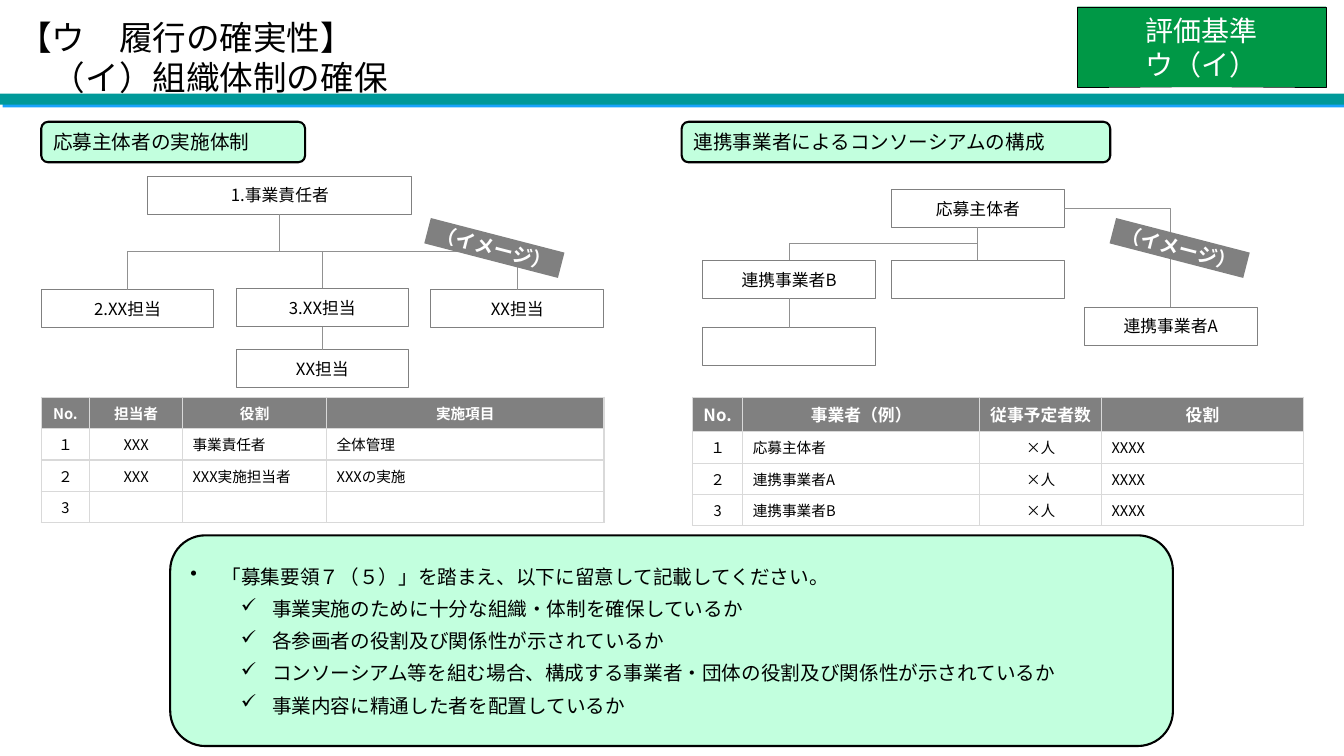
from lxml import etree
from pptx import Presentation, util as u
from pptx.dml import color
from pptx.enum import shapes, text
from pptx.oxml import ns

GRAY, LINE, MINT = "808080", "919191", "C2FFDE"
BLACK, WHITE, BORDER = "000000", "FFFFFF", "D9D9D9"
LEFT, CENTER = text.PP_ALIGN.LEFT, text.PP_ALIGN.CENTER
RECT = shapes.MSO_SHAPE.RECTANGLE
ROUNDED = shapes.MSO_SHAPE.ROUNDED_RECTANGLE
TOP, BOTTOM, RIGHT = 0, 2, 3


def rgb(value):
    return color.RGBColor.from_string(value)


def child(parent, tag, **attributes):
    return etree.SubElement(parent, ns.qn(tag), attributes)


class SlideBuilder:
    font = "Noto Sans CJK JP"

    def __init__(self, presentation):
        self.slide = presentation.slides.add_slide(presentation.slide_layouts[6])

    def style(self, paragraph, size, ink=BLACK, bold=False, align=CENTER):
        paragraph.alignment = align
        for run in paragraph.runs:
            run.font.size = u.Pt(size)
            run.font.bold = bold
            run.font.color.rgb = rgb(ink)
            run.font.name = self.font
            child(run._r.get_or_add_rPr(), "a:ea", typeface=self.font)

    def title(self, words, left, top, width, height):
        frame = self.slide.shapes.add_textbox(
            u.Cm(left), u.Cm(top), u.Cm(width), u.Cm(height)).text_frame
        frame.word_wrap = True
        frame.vertical_anchor = text.MSO_ANCHOR.BOTTOM
        frame.margin_left = frame.margin_right = frame.margin_top = frame.margin_bottom = 0
        frame.text = words
        self.style(frame.paragraphs[0], 24, align=LEFT)
        frame.paragraphs[0].line_spacing = u.Pt(28.6)

    def box(self, words, left, top, width=4.35, height=0.96, kind=RECT, fill=None,
            line=GRAY, weight=0.75, size=12, ink=BLACK, bold=False, align=CENTER):
        shape = self.slide.shapes.add_shape(
            kind, u.Cm(left), u.Cm(top), u.Cm(width), u.Cm(height))
        shape.shadow.inherit = False
        if fill:
            shape.fill.solid()
            shape.fill.fore_color.rgb = rgb(fill)
        else:
            shape.fill.background()
        if line:
            shape.line.color.rgb = rgb(line)
            shape.line.width = u.Pt(weight)
        else:
            shape.line.fill.background()
        frame = shape.text_frame
        frame.word_wrap = True
        frame.vertical_anchor = text.MSO_ANCHOR.MIDDLE
        frame.text = words
        for paragraph in frame.paragraphs:
            self.style(paragraph, size, ink, bold, align)
        return shape

    def label(self, words, left, width):
        self.box(words, left, 3.07, width, 1.02, ROUNDED, MINT, BLACK, 1.5, 14, align=LEFT)

    def sample_tag(self, left):
        tag = self.box("（イメージ）", left, 5.92, 3.48, 0.66, fill=GRAY, line=None,
                       size=14, ink=WHITE, bold=True)
        tag.text_frame.word_wrap = False
        tag.rotation = 14.5

    def connect(self, start, end, kind="straight", site=BOTTOM):
        straight = kind == "straight"
        connector = self.slide.shapes.add_connector(
            shapes.MSO_CONNECTOR.STRAIGHT if straight else shapes.MSO_CONNECTOR.ELBOW,
            0, 0, 0, 0)
        connector.begin_connect(start, site)
        connector.end_connect(end, TOP)
        connector.line.color.rgb = rgb(LINE)
        connector.line.width = u.Pt(0.75)
        properties = connector._element.spPr
        child(properties, "a:effectLst")
        if kind == "corner":
            properties.find(ns.qn("a:prstGeom")).set("prst", "bentConnector2")
        if kind == "tree":
            self.turn(connector, properties.find(ns.qn("a:xfrm")))

    def turn(self, connector, transform):
        x1, y1 = connector.begin_x, connector.begin_y
        x2, y2 = connector.end_x, connector.end_y
        width, height = y2 - y1, abs(x2 - x1)
        connector.left = (x1 + x2 - width) // 2
        connector.top = (y1 + y2 - height) // 2
        connector.width, connector.height = width, height
        for name in ("flipH", "flipV"):
            transform.attrib.pop(name, None)
        transform.set("rot", "5400000" if x2 < x1 else "16200000")
        if x2 > x1:
            transform.set("flipH", "1")

    def table(self, rows, left, top, columns, heights, aligns, head_size):
        table = self.slide.shapes.add_table(
            len(rows), len(columns), u.Cm(left), u.Cm(top),
            u.Cm(sum(columns)), u.Cm(sum(heights))).table
        table.first_row = table.horz_banding = False
        for column, width in zip(table.columns, columns):
            column.width = u.Cm(width)
        for r, (row, height) in enumerate(zip(rows, heights)):
            table.rows[r].height = u.Cm(height)
            for c, words in enumerate(row):
                self.cell(table.cell(r, c), words, r == 0, aligns[c], head_size)

    def cell(self, cell, words, head, align, head_size):
        cell.vertical_anchor = text.MSO_ANCHOR.MIDDLE
        cell.text = words
        paragraph = cell.text_frame.paragraphs[0]
        if head:
            self.style(paragraph, head_size, WHITE, True)
        else:
            self.style(paragraph, 10.5, align=align)
        if not words:
            child(paragraph._p, "a:endParaRPr", sz="1050")
        properties = cell._tc.get_or_add_tcPr()
        for side in ("a:lnL", "a:lnR", "a:lnT", "a:lnB"):
            border = child(properties, side, w=str(u.Pt(1)))
            child(child(border, "a:solidFill"), "a:srgbClr", val=BORDER)
        if head:
            cell.fill.solid()
            cell.fill.fore_color.rgb = rgb(GRAY)
        else:
            cell.fill.background()

    def checklist(self, heading, points, left, top, width, height):
        shape = self.box("\n".join([heading, *points]), left, top, width, height,
                         ROUNDED, MINT, BLACK, 1.5, 14, align=LEFT)
        for i, paragraph in enumerate(shape.text_frame.paragraphs):
            properties = paragraph._p.get_or_add_pPr()
            properties.set("marL", str(u.Cm(2.06 if i else 0.79)))
            properties.set("indent", str(-u.Cm(0.79)))
            child(properties, "a:buChar", char="✓" if i else "•")
            paragraph.line_spacing = u.Pt(17)
            if i:
                paragraph.level = 1
                paragraph.space_before = u.Pt(6)

    def header_bar(self):
        bar = self.box("", 0, 2.36, 33.87, 0.28, fill="009999", line=None)
        effects = bar._element.spPr.find(ns.qn("a:effectLst"))
        shadow = child(effects, "a:outerShdw", dist=str(u.Pt(2.8)), dir="2700000")
        child(shadow, "a:srgbClr", val="19A3FC")


def main():
    presentation = Presentation()
    presentation.slide_width, presentation.slide_height = u.Cm(33.87), u.Cm(19.05)
    builder = SlideBuilder(presentation)
    builder.header_bar()
    builder.title("【ウ　履行の確実性】\v　（イ）組織体制の確保", 0.46, 0, 33.4, 2.44)
    criterion = builder.box("評価基準\nウ（イ）", 27.15, 0.17, 6.27, 2.02,
                            fill="009846", line=BLACK, weight=0.25, size=20, ink=WHITE)
    for paragraph in criterion.text_frame.paragraphs:
        paragraph.line_spacing = u.Pt(24.3)
    builder.label("応募主体者の実施体制", 1.04, 6.65)
    builder.label("連携事業者によるコンソーシアムの構成", 17.18, 10.8)

    leader = builder.box("1.事業責任者", 3.73, 4.44, 6.65)
    members = [builder.box(words, 1.04 + 4.91 * i, top) for i, (words, top) in enumerate(
        [("2.XX担当", 7.3), ("3.XX担当", 7.27), ("XX担当", 7.3)])]
    for member in members:
        builder.connect(leader, member, "tree")
    builder.connect(members[1], builder.box("XX担当", 5.95, 8.81))

    applicant = builder.box("応募主体者", 22.47, 4.77)
    partner_b = builder.box("連携事業者B", 17.71, 6.56)
    builder.connect(applicant, builder.box("", 22.47, 6.56))
    builder.connect(applicant, partner_b, "tree")
    builder.connect(applicant, builder.box("連携事業者A", 27.33, 7.74), "corner", RIGHT)
    builder.connect(partner_b, builder.box("", 17.71, 8.26))
    for left in (10.72, 27.99):
        builder.sample_tag(left)

    builder.table([["No.", "担当者", "役割", "実施項目"],
                   ["１", "XXX", "事業責任者", "全体管理"],
                   ["２", "XXX", "XXX実施担当者", "XXXの実施"],
                   ["3", "", "", ""]],
                  1.04, 10.01, [1.22, 2.34, 3.63, 6.99], [0.79] * 4,
                  [CENTER, CENTER, LEFT, LEFT], 10.5)
    builder.table([["No.", "事業者（例）", "従事予定者数", "役割"],
                   ["１", "応募主体者", "×人", "XXXX"],
                   ["２", "連携事業者A", "×人", "XXXX"],
                   ["3", "連携事業者B", "×人", "XXXX"]],
                  17.45, 10.01, [1.27, 5.97, 3.07, 5.08], [0.87] + [0.79] * 3,
                  [CENTER, LEFT, CENTER, LEFT], 12)
    builder.checklist("「募集要領７（５）」を踏まえ、以下に留意して記載してください。",
                      ["事業実施のために十分な組織・体制を確保しているか",
                       "各参画者の役割及び関係性が示されているか",
                       "コンソーシアム等を組む場合、構成する事業者・団体の役割及び関係性が示されているか",
                       "事業内容に精通した者を配置しているか"],
                      4.29, 13.49, 25.27, 5.31)
    presentation.save("out.pptx")


if __name__ == "__main__":
    main()
